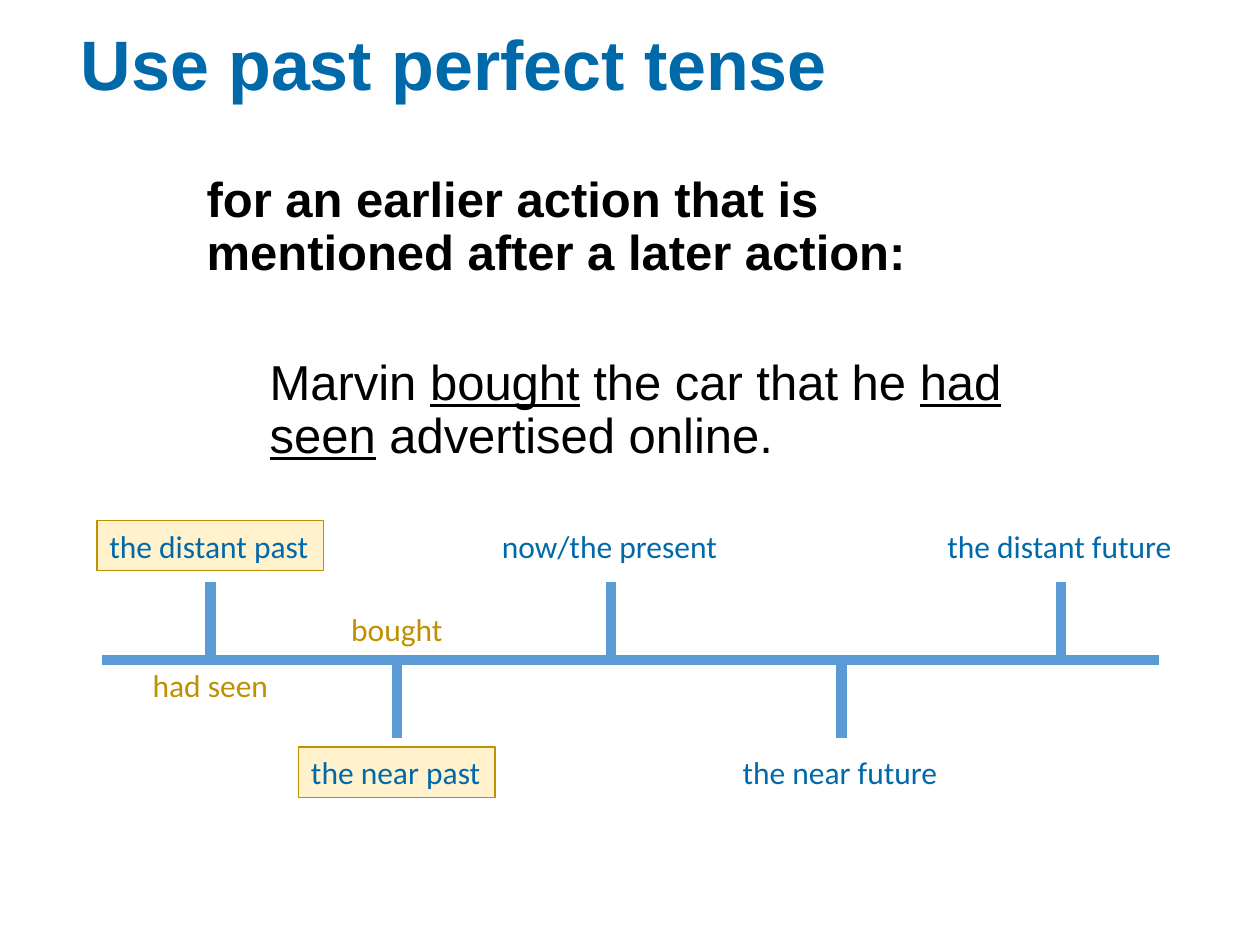
from dataclasses import dataclass

from lxml import etree
from pptx import Presentation
from pptx.dml.color import RGBColor
from pptx.enum.shapes import MSO_CONNECTOR, MSO_SHAPE
from pptx.enum.text import MSO_ANCHOR, MSO_AUTO_SIZE, PP_ALIGN
from pptx.oxml.ns import qn
from pptx.util import Inches, Pt

STRAIGHT = MSO_CONNECTOR.STRAIGHT
RECTANGLE = MSO_SHAPE.RECTANGLE
MIDDLE, TOP = MSO_ANCHOR.MIDDLE, MSO_ANCHOR.TOP
LEFT, CENTER = PP_ALIGN.LEFT, PP_ALIGN.CENTER
NO_AUTOFIT, GROW = MSO_AUTO_SIZE.NONE, MSO_AUTO_SIZE.SHAPE_TO_FIT_TEXT

BLUE = RGBColor(0x00, 0x69, 0xAA)
LINE_BLUE = RGBColor(0x5B, 0x9B, 0xD5)
GOLD = RGBColor(0xBF, 0x90, 0x00)
CREAM = RGBColor(0xFF, 0xF2, 0xCC)
BLACK = RGBColor(0x00, 0x00, 0x00)

AXIS_Y = 5.24
TICK_LENGTH = 0.62
LABEL_HEIGHT = 0.4
UPPER_LABEL_TOP = 4.13
LOWER_LABEL_TOP = 5.93


@dataclass
class Moment:
    text: str
    x: float
    width: float
    above: bool
    boxed: bool = False


@dataclass
class Verb:
    text: str
    x: float
    top: float
    width: float


MOMENTS = [
    Moment("the distant past", 1.67, 1.8, above=True, boxed=True),
    Moment("the near past", 3.15, 1.56, above=False, boxed=True),
    Moment("now/the present", 4.85, 1.93, above=True),
    Moment("the near future", 6.68, 1.77, above=False),
    Moment("the distant future", 8.42, 2.0, above=True),
]
VERBS = [
    Verb("bought", 3.15, 4.79, 0.94),
    Verb("had seen", 1.67, AXIS_Y, 1.13),
]
EXAMPLE = [
    ("Marvin ", False), ("bought", True), (" the car that he ", False),
    ("had", True), (" ", False), ("seen", True), (" advertised online.", False),
]


def set_font(font, color: RGBColor, **values) -> None:
    for name, value in values.items():
        setattr(font, name, value)
    font.color.rgb = color


def place(shape, left: float, top: float, width: float, height: float) -> None:
    shape.left, shape.top = Inches(left), Inches(top)
    shape.width, shape.height = Inches(width), Inches(height)


def clear_bullet(paragraph, indent: float) -> None:
    properties = paragraph._p.get_or_add_pPr()
    properties.set("marL", str(Inches(indent)))
    properties.set("indent", "0")
    etree.SubElement(properties, qn("a:buNone"))


def add_line(slide, x1: float, y1: float, x2: float, y2: float) -> None:
    line = slide.shapes.add_connector(
        STRAIGHT, Inches(x1), Inches(y1), Inches(x2), Inches(y2))
    line.line.color.rgb = LINE_BLUE
    line.line.width = Pt(6)
    etree.SubElement(line._element.spPr, qn("a:effectLst"))


def add_label(slide, text: str, x: float, top: float, width: float,
              color: RGBColor, align: PP_ALIGN, boxed: bool = False) -> None:
    """Add a one-line label centred on x."""
    bounds = [Inches(v) for v in (x - width / 2, top, width, LABEL_HEIGHT)]
    if boxed:
        label = slide.shapes.add_shape(RECTANGLE, *bounds)
        label.shadow.inherit = False
        label.fill.solid()
        label.fill.fore_color.rgb = CREAM
        label.line.color.rgb = GOLD
        label.line.width = Pt(0.75)
    else:
        label = slide.shapes.add_textbox(*bounds)
    frame = label.text_frame
    frame.word_wrap = False
    frame.auto_size = GROW
    frame.vertical_anchor = TOP
    paragraph = frame.paragraphs[0]
    paragraph.text = text
    paragraph.alignment = align
    set_font(paragraph.font, color, name="Calibri", size=Pt(18))


def fill_title(title) -> None:
    place(title, 0.54, 0.29, 8.93, 0.5)
    frame = title.text_frame
    frame.text = "Use past perfect tense"
    frame.auto_size = NO_AUTOFIT
    frame.vertical_anchor = MIDDLE
    heading = frame.paragraphs[0]
    heading.alignment = LEFT
    heading.line_spacing = 0.9
    set_font(heading.runs[0].font, BLUE, name="Arial", size=Pt(40), bold=True)


def fill_body(body) -> None:
    place(body, 1.54, 1.34, 6.92, 2.53)
    frame = body.text_frame
    frame.auto_size = NO_AUTOFIT
    frame.vertical_anchor = TOP
    rule = frame.paragraphs[0]
    example = frame.add_paragraph()
    example.level = 1
    for paragraph, indent, before in ((rule, 0, 0), (example, 0.5, 44)):
        paragraph.line_spacing = 0.9
        paragraph.space_before = Pt(before)
        clear_bullet(paragraph, indent)
    style = {"name": "Arial", "size": Pt(28)}
    run = rule.add_run()
    run.text = "for an earlier action that is mentioned after a later action:"
    set_font(run.font, BLACK, bold=True, **style)
    for text, underlined in EXAMPLE:
        run = example.add_run()
        run.text = text
        set_font(run.font, BLACK, bold=False, underline=underlined, **style)


def draw_timeline(slide) -> None:
    for moment in MOMENTS:
        if moment.above:
            tick_end, label_top = AXIS_Y - TICK_LENGTH, UPPER_LABEL_TOP
        else:
            tick_end, label_top = AXIS_Y + TICK_LENGTH, LOWER_LABEL_TOP
        add_line(slide, moment.x, AXIS_Y, moment.x, tick_end)
        add_label(slide, moment.text, moment.x, label_top, moment.width,
                  BLUE, LEFT, moment.boxed)
    add_line(slide, 0.81, AXIS_Y, 9.2, AXIS_Y)
    for verb in VERBS:
        add_label(slide, verb.text, verb.x, verb.top, verb.width, GOLD, CENTER)


def main() -> None:
    presentation = Presentation()
    presentation.slide_width = Inches(10)
    presentation.slide_height = Inches(7.5)
    slide = presentation.slides.add_slide(presentation.slide_layouts[1])
    fill_title(slide.shapes.title)
    fill_body(slide.placeholders[1])
    draw_timeline(slide)
    presentation.save("out.pptx")


if __name__ == "__main__":
    main()
